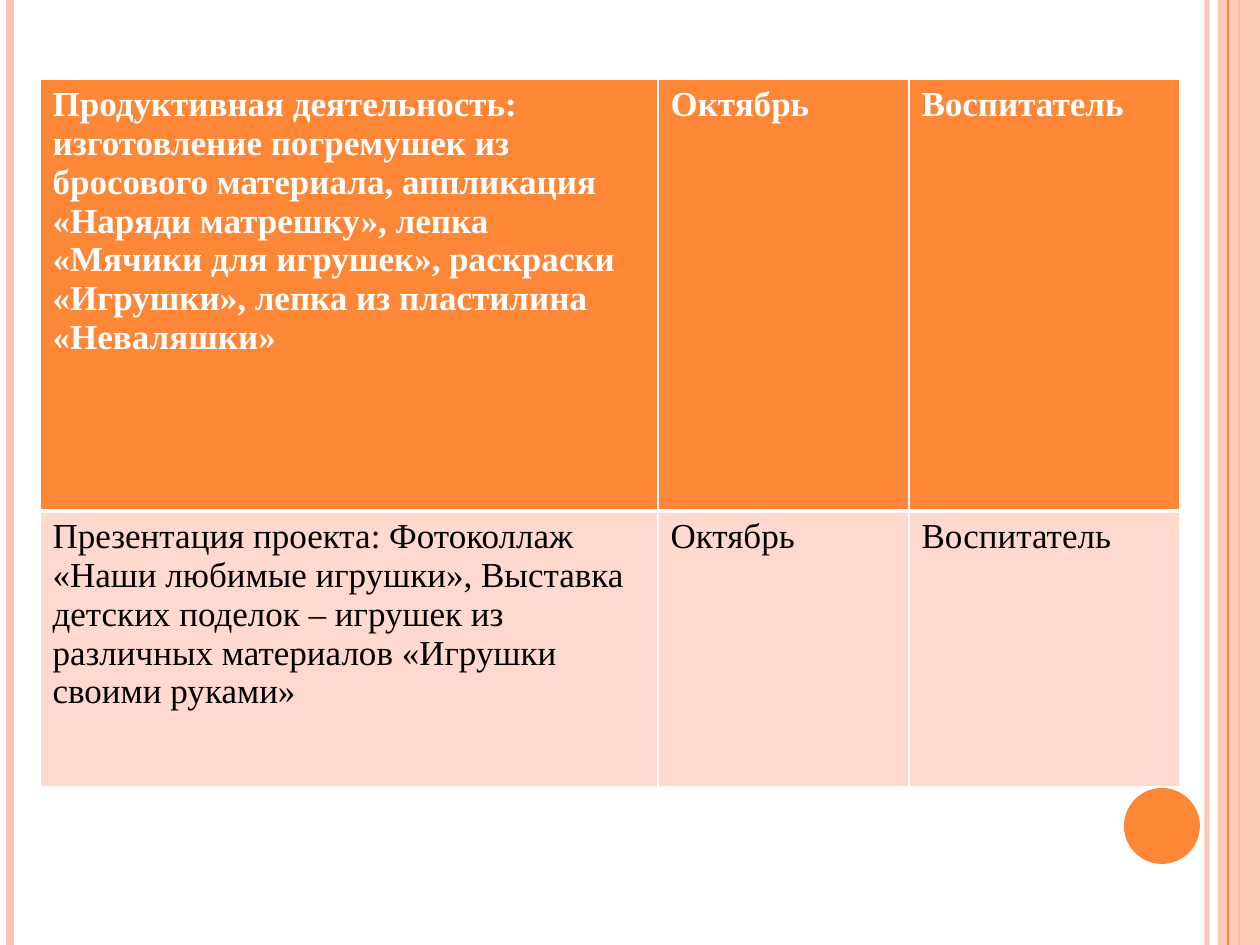
from dataclasses import dataclass
from lxml import etree
from pptx import Presentation
from pptx.dml.color import RGBColor
from pptx.enum.shapes import MSO_CONNECTOR, MSO_SHAPE
from pptx.oxml.ns import qn
from pptx.util import Pt

SCALE = 914400 / 126
WIDTH, HEIGHT = 1260, 945
LINE = MSO_CONNECTOR.STRAIGHT
RECT, OVAL = MSO_SHAPE.RECTANGLE, MSO_SHAPE.OVAL
HUES = {"orange": "FE8637", "peach": "FEC3AE", "pale": "FFD9CE", "white": "FFFFFF", "black": "000000"}
FONT = "Times New Roman"


@dataclass
class Stripe:
    x: int
    hue: str
    width: float
    alpha: int = 100


@dataclass
class Block:
    kind: int
    x: int
    y: int
    w: int
    h: int
    hue: str
    alpha: int = 100


@dataclass
class Row:
    height: int
    fill: str
    ink: str
    bold: bool
    edges: dict[str, int]
    texts: tuple[str, ...]


DECOR = (
    Stripe(1207, "peach", 3, 93),
    Stripe(10, "peach", 4.5),
    Stripe(1239, "orange", 1.5),
    Block(RECT, 1218, 0, 42, HEIGHT, "peach", 87),
    Stripe(1228, "orange", 0.75),
    Block(OVAL, 1124, 788, 76, 76, "orange"),
)
LEFT, TOP = 40, 79
COLS = (618, 251, 271)
ROWS = (
    Row(432, "orange", "white", True, {"L": 1, "R": 1, "T": 1, "B": 3}, (
        "Продуктивная деятельность: изготовление погремушек из бросового материала, "
        "аппликация «Наряди матрешку», лепка «Мячики для игрушек», "
        "раскраски «Игрушки», лепка из пластилина «Неваляшки»",
        "Октябрь", "Воспитатель")),
    Row(276, "pale", "black", False, {"L": 1, "R": 1, "T": 3, "B": 1}, (
        "Презентация проекта: Фотоколлаж «Наши любимые игрушки», "
        "Выставка детских поделок – игрушек из различных материалов "
        "«Игрушки своими руками»",
        "Октябрь", "Воспитатель")),
)


def px(size: int) -> int:
    return round(size * SCALE)


def paint(fill, hue: str) -> None:
    fill.solid()
    fill.fore_color.rgb = RGBColor.from_string(HUES[hue])


def fade(part, alpha: int) -> None:
    if alpha < 100:
        tint = next(part.iter(qn("a:srgbClr")))
        etree.SubElement(tint, qn("a:alpha"), val=str(alpha * 1000))


def write(frame, text: str, *, size: int, hue: str, bold: bool) -> None:
    run = frame.paragraphs[0].add_run()
    run.text = text
    font = run.font
    font.name, font.size, font.bold = FONT, Pt(size), bold
    font.color.rgb = RGBColor.from_string(HUES[hue])


def draw_stripe(slide, item: Stripe) -> None:
    line = slide.shapes.add_connector(LINE, px(item.x), 0, px(item.x), px(HEIGHT))
    line.line.width = Pt(item.width)
    paint(line.line.fill, item.hue)
    props = line._element.spPr
    fade(props, item.alpha)
    etree.SubElement(props, qn("a:effectLst"))


def draw_block(slide, item: Block) -> None:
    shape = slide.shapes.add_shape(item.kind, px(item.x), px(item.y), px(item.w), px(item.h))
    shape.shadow.inherit = False
    paint(shape.fill, item.hue)
    shape.line.fill.background()
    fade(shape._element.spPr, item.alpha)


def edge(cell, side: str, width: int) -> None:
    props = cell._tc.get_or_add_tcPr()
    line = etree.SubElement(props, qn(f"a:ln{side}"), w=str(Pt(width)))
    fill = etree.SubElement(line, qn("a:solidFill"))
    etree.SubElement(fill, qn("a:srgbClr"), val=HUES["white"])


def draw_table(slide) -> None:
    table = slide.shapes.add_table(
        len(ROWS), len(COLS), px(LEFT), px(TOP),
        px(sum(COLS)), px(sum(row.height for row in ROWS))).table
    for col, width in zip(table.columns, COLS):
        col.width = px(width)
    for line, row in zip(table.rows, ROWS):
        line.height = px(row.height)
        for cell, text in zip(line.cells, row.texts):
            for side, width in row.edges.items():
                edge(cell, side, width)
            paint(cell.fill, row.fill)
            write(cell.text_frame, text, size=20, hue=row.ink, bold=row.bold)


def main() -> None:
    deck = Presentation()
    deck.slide_width, deck.slide_height = px(WIDTH), px(HEIGHT)
    slide = deck.slides.add_slide(deck.slide_layouts[6])
    paint(slide.background.fill, "white")
    for item in DECOR:
        if isinstance(item, Stripe):
            draw_stripe(slide, item)
        else:
            draw_block(slide, item)
    draw_table(slide)
    deck.save("out.pptx")


if __name__ == "__main__":
    main()
